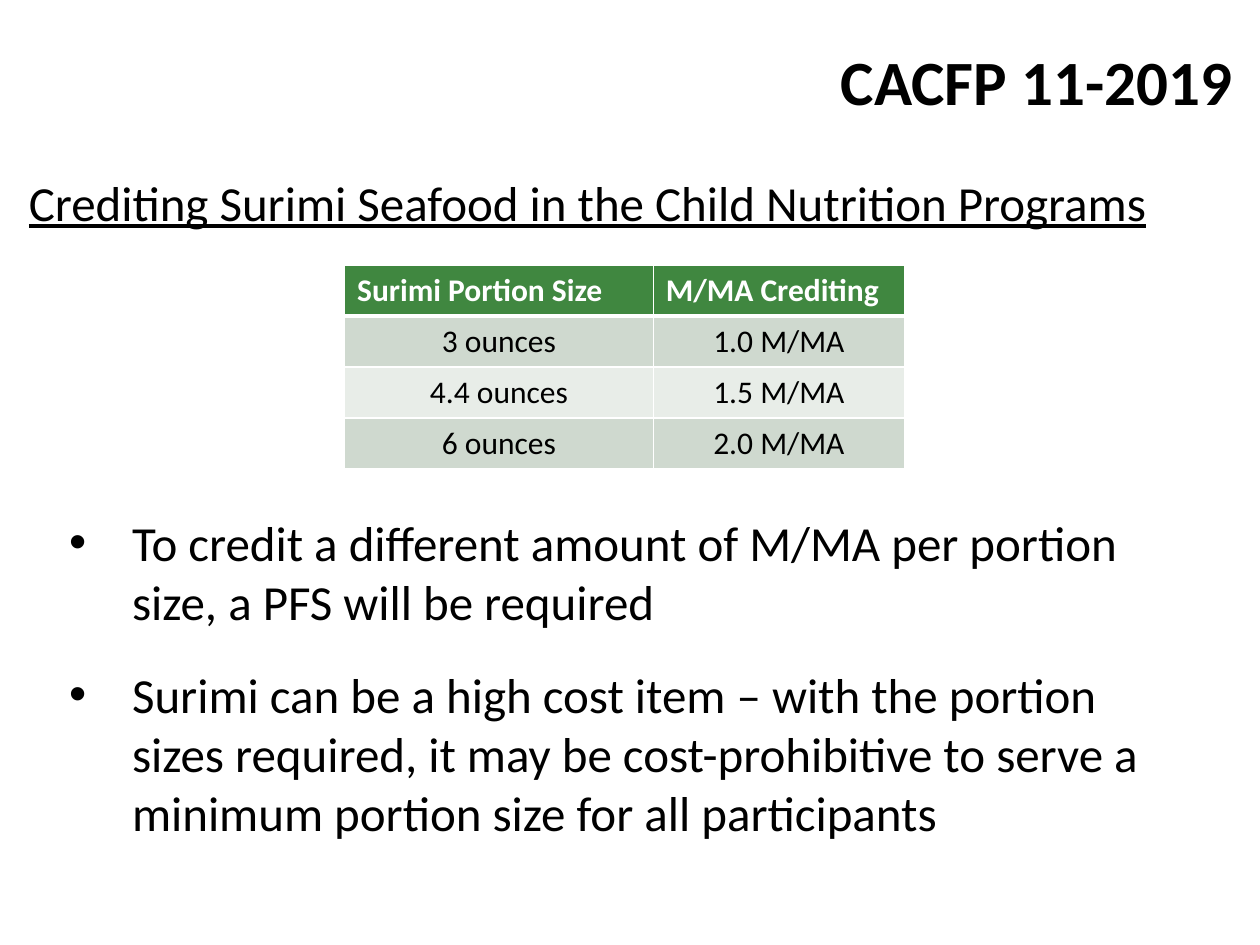
from lxml.etree import SubElement
from pptx import Presentation
from pptx.dml.color import RGBColor
from pptx.enum.text import MSO_ANCHOR as Anchor, PP_ALIGN as Align
from pptx.oxml.ns import qn
from pptx.util import Pt

COLORS = {"text": "000000", "white": "FFFFFF", "header": "408740",
          "odd": "CFD9CF", "even": "E8EDE8"}


def write(para, text, color="text", **formats):
    para.text = text
    para.font.name = "Calibri"
    para.font.color.rgb = RGBColor.from_string(COLORS[color])
    for name, value in formats.items():
        setattr(para.font, name, value)


def add_box(left, top, width, height, anchor=Anchor.TOP):
    """Add a wrapping text box and return its text frame."""
    frame = page.shapes.add_textbox(Pt(left), Pt(top), Pt(width), Pt(height)).text_frame
    frame.word_wrap = True
    frame.vertical_anchor = anchor
    return frame


deck = Presentation()
deck.slide_width, deck.slide_height = Pt(720), Pt(540)
page = deck.slides.add_slide(deck.slide_layouts[6])

# Title and subtitle
title = add_box(148.3, 8.6, 563, 80, Anchor.MIDDLE).paragraphs[0]
title.alignment = Align.RIGHT
title.line_spacing = 0.9
write(title, "CACFP 11-2019", size=Pt(36), bold=True)

subtitle = add_box(9.4, 98.6, 695.5, 40).paragraphs[0]
subtitle.line_spacing = 0.9
write(subtitle, "Crediting Surimi Seafood in the Child Nutrition Programs",
      size=Pt(28), underline=True)

# Crediting table
rows = [("Surimi Portion Size", "M/MA Crediting"),
        ("3 ounces", "1.0 M/MA"),
        ("4.4 ounces", "1.5 M/MA"),
        ("6 ounces", "2.0 M/MA")]
column_widths = [176.4, 143.6]
row_height = 29.2
table = page.shapes.add_table(len(rows), 2, Pt(196.9), Pt(151.3), Pt(sum(column_widths)),
                              Pt(row_height * len(rows))).table
for column, width in zip(table.columns, column_widths):
    column.width = Pt(width)

for row_index, texts in enumerate(rows):
    table.rows[row_index].height = Pt(row_height)
    is_header = row_index == 0
    fill = "header" if is_header else "odd" if row_index % 2 else "even"
    # The rule under the header is thicker than the others
    line_widths = {"L": 1, "R": 1, "T": 3 if row_index == 1 else 1, "B": 3 if is_header else 1}
    for column_index, text in enumerate(texts):
        cell = table.cell(row_index, column_index)
        properties = cell._tc.get_or_add_tcPr()
        for side, width in line_widths.items():
            line = SubElement(properties, qn(f"a:ln{side}"), w=str(Pt(width)))
            solid = SubElement(line, qn("a:solidFill"))
            SubElement(solid, qn("a:srgbClr"), val=COLORS["white"])
        cell.fill.solid()
        cell.fill.fore_color.rgb = RGBColor.from_string(COLORS[fill])
        para = cell.text_frame.paragraphs[0]
        para.alignment = Align.LEFT if is_header else Align.CENTER
        write(para, text, "white" if is_header else "text", size=Pt(18), bold=is_header)

# Bullet points
points = ["To credit a different amount of M/MA per portion size, a PFS will be required",
          "Surimi can be a high cost item – with the portion sizes required, "
          "it may be cost-prohibitive to serve a minimum portion size for all participants"]
frame = add_box(32.4, 289.4, 635.8, 196.6)
for index, point in enumerate(points):
    para = frame.add_paragraph() if index else frame.paragraphs[0]
    if index:
        para.space_before = Pt(19.5)
    properties = para._p.get_or_add_pPr()
    properties.set("marL", str(Pt(36)))
    properties.set("indent", str(-Pt(36)))
    SubElement(properties, qn("a:buFont"), typeface="Arial")
    SubElement(properties, qn("a:buChar"), char="•")
    write(para, point, size=Pt(28))

deck.save("out.pptx")
